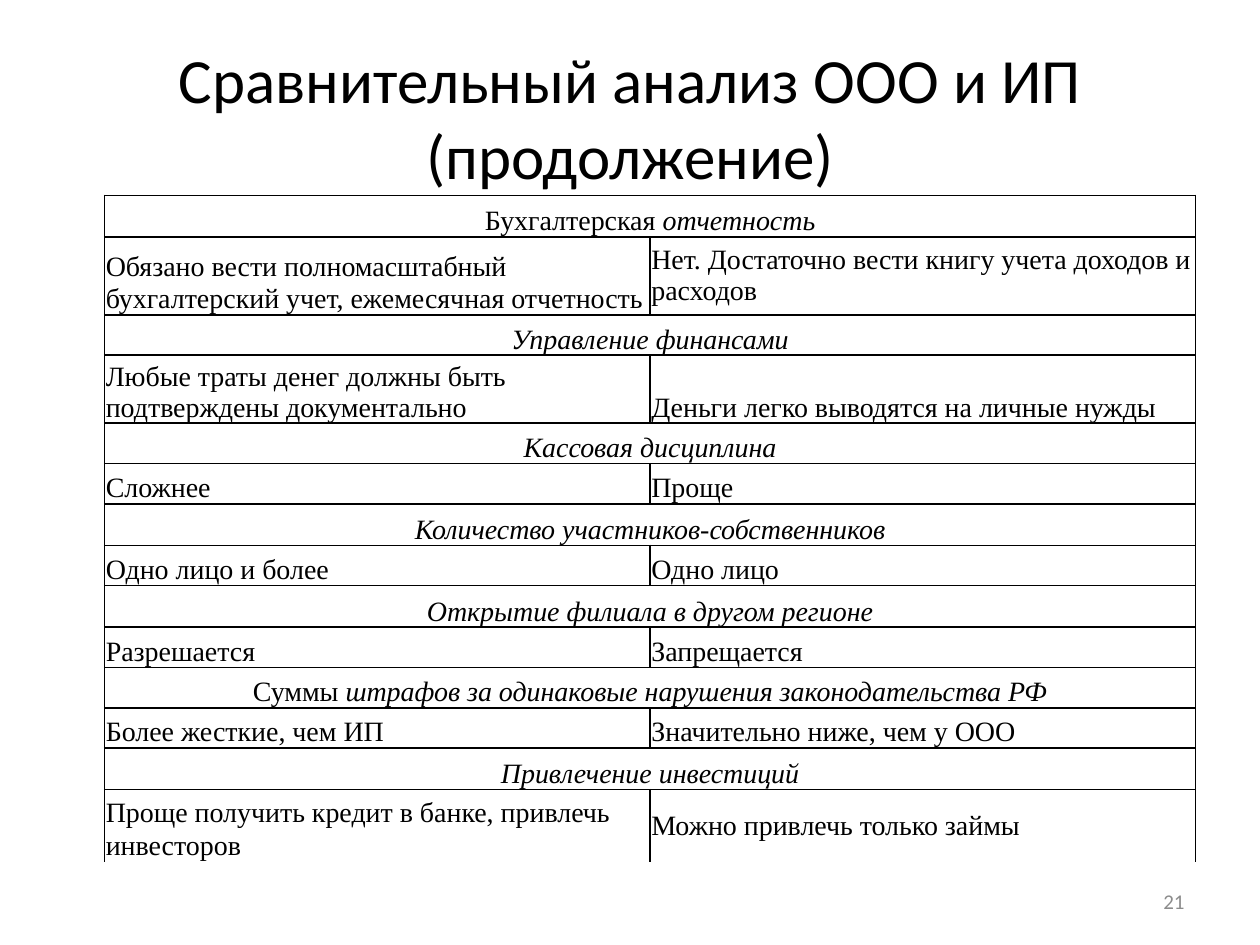
import pptx
import pptx.util
import pptx.dml.color
import pptx.enum.text
import lxml.etree

ALIGN = pptx.enum.text.PP_ALIGN
ANCHOR = pptx.enum.text.MSO_ANCHOR
BOTTOM, MIDDLE = ANCHOR.BOTTOM, ANCHOR.MIDDLE

# Content: (upright start of heading, italic rest, heading height, ООО, ИП, answer height)
# Each answer is (text, anchor, line spacing)
TITLE = "Сравнительный анализ ООО и ИП (продолжение)"
PAGE = "21"
TOPICS = [
    ("Бухгалтерская ", "отчетность", 0.33,
     ("Обязано вести полномасштабный бухгалтерский учет, ежемесячная отчетность", BOTTOM, 1.05),
     ("Нет. Достаточно вести книгу учета доходов и расходов", MIDDLE, None), 0.62),
    ("", "Управление финансами", 0.32,
     ("Любые траты денег должны быть подтверждены документально", BOTTOM, None),
     ("Деньги легко выводятся на личные нужды", BOTTOM, 1.07), 0.54),
    ("", "Кассовая дисциплина", 0.32,
     ("Сложнее", BOTTOM, None), ("Проще", BOTTOM, None), 0.32),
    ("", "Количество участников-собственников", 0.33,
     ("Одно лицо и более", BOTTOM, None), ("Одно лицо", BOTTOM, None), 0.32),
    ("", "Открытие филиала в другом регионе", 0.33,
     ("Разрешается", BOTTOM, None), ("Запрещается", BOTTOM, None), 0.32),
    ("Суммы ", "штрафов за одинаковые нарушения законодательства РФ", 0.32,
     ("Более жесткие, чем ИП", BOTTOM, None),
     ("Значительно ниже, чем у ООО", BOTTOM, None), 0.32),
    ("", "Привлечение инвестиций", 0.33,
     ("Проще получить кредит в банке, привлечь инвесторов", BOTTOM, 1.07),
     ("Можно привлечь только займы", MIDDLE, None), 0.53),
]

THEME = {
    "heading": ("Calibri", 36, "000000"),
    "table": ("Times New Roman", 16, "000000"),
    "page": ("Calibri", 12, "8C8C8C"),
    "cell": "FFFFFF",
    "border": "000000",
    "border_width": 1,
}

WIDTH, HEIGHT = 10, 7.5
MARGIN = 0.05 * WIDTH
TABLE_LEFT, TABLE_TOP, TABLE_WIDTH = 0.83, 1.55, 8.66
inch = pptx.util.Inches


def rgb(value):
    return pptx.dml.color.RGBColor.from_string(value)


def add_run(paragraph, text, style, italic=False):
    run = paragraph.add_run()
    run.text = text
    font, size, colour = THEME[style]
    run.font.name = font
    run.font.size = pptx.util.Pt(size)
    run.font.color.rgb = rgb(colour)
    run.font.italic = italic


def add_label(slide, text, style, align, left, top, width, height):
    frame = slide.shapes.add_textbox(*map(inch, (left, top, width, height))).text_frame
    frame.word_wrap = True
    frame.vertical_anchor = MIDDLE
    frame.paragraphs[0].alignment = align
    add_run(frame.paragraphs[0], text, style)


def style_cell(cell, sides):
    cell.margin_left = cell.margin_right = inch(0.01)
    cell.margin_top = cell.margin_bottom = 0
    cell.fill.solid()
    cell.fill.fore_color.rgb = rgb(THEME["cell"])
    # Borders come before the fill in the cell properties
    ns = pptx.oxml.ns.qn
    properties = cell._tc.get_or_add_tcPr()
    for index, side in enumerate(("L", "R", "T", "B")):
        line = lxml.etree.Element(ns("a:ln" + side))
        if side in sides:
            line.set("w", str(pptx.util.Pt(THEME["border_width"])))
            fill = lxml.etree.SubElement(line, ns("a:solidFill"))
            lxml.etree.SubElement(fill, ns("a:srgbClr"), val=THEME["border"])
        else:
            lxml.etree.SubElement(line, ns("a:noFill"))
        properties.insert(index, line)


def fill_answer(cell, answer):
    text, cell.vertical_anchor, spacing = answer
    paragraph = cell.text_frame.paragraphs[0]
    paragraph.line_spacing = spacing
    add_run(paragraph, text, "table")


def add_comparison(slide):
    heights = [h for topic in TOPICS for h in (topic[2], topic[5])]
    table = slide.shapes.add_table(
        len(heights), 2, *map(inch, (TABLE_LEFT, TABLE_TOP, TABLE_WIDTH, sum(heights)))).table
    table.first_row = table.horz_banding = False
    for column in table.columns:
        column.width = inch(TABLE_WIDTH / 2)
    for number, height in enumerate(heights):
        table.rows[number].height = inch(height)
        # The last row stays open at the bottom
        sides = "LRT" if number == len(heights) - 1 else "LRTB"
        for cell in table.rows[number].cells:
            style_cell(cell, sides)

    for number, (upright, italic, _, company, owner, _) in enumerate(TOPICS):
        # Heading across both columns
        heading = table.cell(2 * number, 0)
        heading.merge(table.cell(2 * number, 1))
        heading.vertical_anchor = BOTTOM
        paragraph = heading.text_frame.paragraphs[0]
        paragraph.alignment = ALIGN.CENTER
        if upright:
            add_run(paragraph, upright, "table")
        add_run(paragraph, italic, "table", italic=True)
        # Answers below it
        for column, answer in enumerate((company, owner)):
            fill_answer(table.cell(2 * number + 1, column), answer)


def main():
    deck = pptx.Presentation()
    deck.slide_width, deck.slide_height = inch(WIDTH), inch(HEIGHT)
    slide = deck.slides.add_slide(deck.slide_layouts[6])
    add_label(slide, TITLE, "heading", ALIGN.CENTER,
              MARGIN, 0.04 * HEIGHT, WIDTH - 2 * MARGIN, 1.25)
    add_comparison(slide)
    page_width = 2.33
    add_label(slide, PAGE, "page", ALIGN.RIGHT,
              WIDTH - MARGIN - page_width, 6.95, page_width, 0.4)
    deck.save("out.pptx")


if __name__ == "__main__":
    main()
